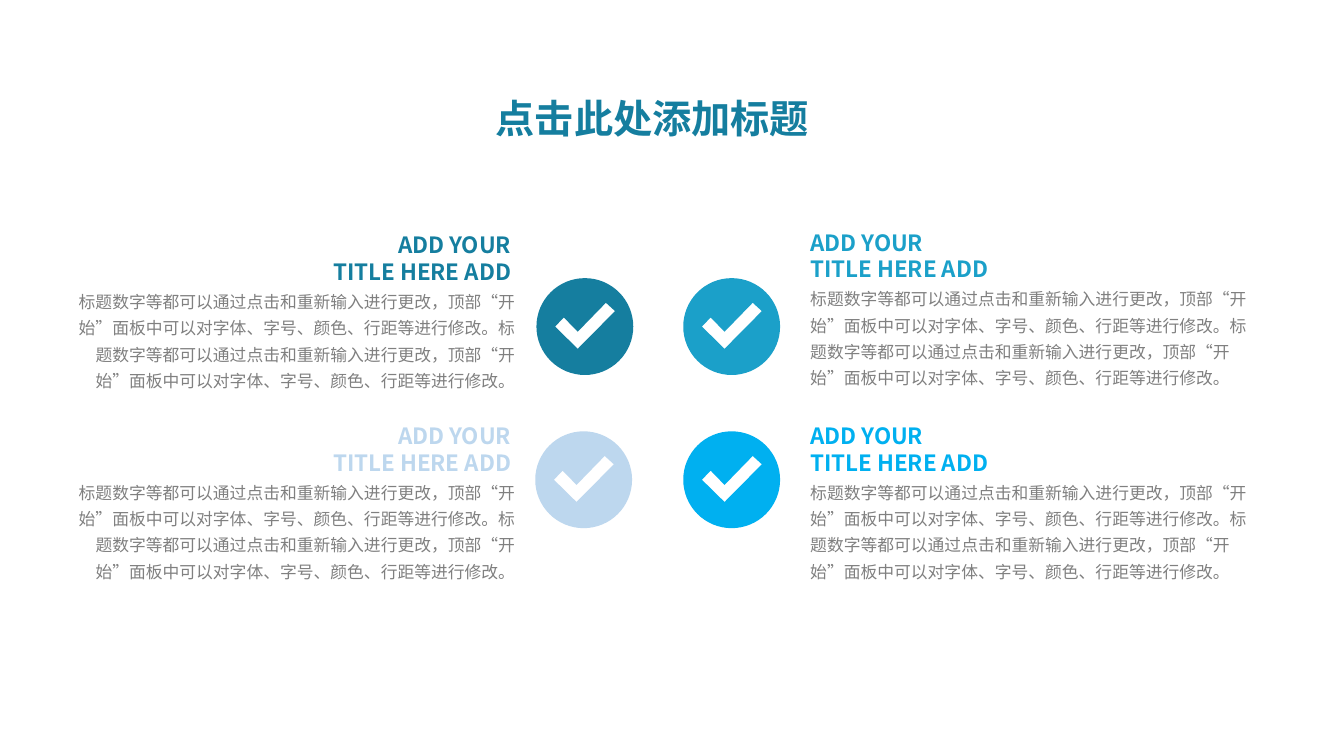
from math import cos, pi, sin

from lxml import etree
from pptx import Presentation
from pptx import util as u
from pptx.dml.color import RGBColor
from pptx.enum import text
from pptx.oxml.ns import qn

FONT = "Noto Sans CJK SC"
HUES = {"teal": "157E9F", "blue": "1BA0C9", "pale": "BDD7EE",
        "sky": "00B0F0", "gray": "808080"}
LEFT, RIGHT = text.PP_ALIGN.LEFT, text.PP_ALIGN.RIGHT
NOTE = "标题数字等都可以通过点击和重新输入进行更改，顶部“开始”面板中可以对字体、字号、颜色、行距等进行修改。"


def write(box, lines, size, hue, bold=False, align=LEFT, space=1.0):
    frame = box.text_frame
    frame.word_wrap = True
    frame.auto_size = text.MSO_AUTO_SIZE.SHAPE_TO_FIT_TEXT
    frame.vertical_anchor = text.MSO_ANCHOR.TOP
    frame.text = "\n".join(lines)
    for para in frame.paragraphs:
        para.alignment = align
        para.line_spacing = space
        font = para.font
        font.size, font.bold, font.name = u.Pt(size), bold, FONT
        font.color.rgb = RGBColor.from_string(HUES[hue])
        # East Asian typeface
        props = para._p.pPr.find(qn("a:defRPr"))
        etree.SubElement(props, qn("a:ea"), typeface=FONT)


def place(left, top, width, height):
    return [u.Cm(n) for n in (left, top, width, height)]


deck = Presentation()
deck.slide_width, deck.slide_height = u.Cm(33.87), u.Cm(19.05)
slide = deck.slides.add_slide(deck.slide_layouts[5])

# Title
title = slide.shapes.title
title.left, title.top, title.width, title.height = place(12.24, 2.24, 8.74, 1.45)
write(title, ["点击此处添加标题"], 28, "teal", bold=True)

# Badge outline: a disc, and a tick cut out of it, around a centre
RADIUS, STEPS = 1.22, 64
disc = [(-RADIUS * sin(2 * pi * i / STEPS), -RADIUS * cos(2 * pi * i / STEPS))
        for i in range(STEPS)]
tick = [(-0.18, 0.56), (-0.75, 0), (-0.53, -0.23),
        (-0.18, 0.13), (0.53, -0.6), (0.76, -0.39)]

# Four items: hue, badge centre, top of heading, text side
items = [
    ("teal", 14.74, 8.23, 5.71, RIGHT),
    ("blue", 18.44, 8.23, 5.64, LEFT),
    ("sky", 18.44, 12.09, 10.52, LEFT),
    ("pale", 14.71, 12.09, 10.52, RIGHT),
]
for hue, mid_x, mid_y, top, align in items:
    # Badge
    rings = [[(u.Cm(mid_x + x), u.Cm(mid_y + y)) for x, y in ring]
             for ring in (disc, tick)]
    pen = slide.shapes.build_freeform(*rings[0][0])
    pen.add_line_segments(rings[0][1:])
    pen.move_to(*rings[1][0])
    pen.add_line_segments(rings[1][1:])
    badge = pen.convert_to_shape()
    badge.shadow.inherit = False
    badge.fill.solid()
    badge.fill.fore_color.rgb = RGBColor.from_string(HUES[hue])
    badge.line.fill.background()

    # Body and heading
    body_x, head_x = (20.17, 20.17) if align == LEFT else (1.68, 4.39)
    body = slide.shapes.add_textbox(*place(body_x, top + 1.37, 11.56, 2.92))
    write(body, [NOTE * 2], 12, "gray", align=align, space=1.3)
    head = slide.shapes.add_textbox(*place(head_x, top, 8.74, 1.63))
    write(head, ["ADD YOUR", "TITLE HERE ADD"], 16, hue, bold=True, align=align)

deck.save("out.pptx")
